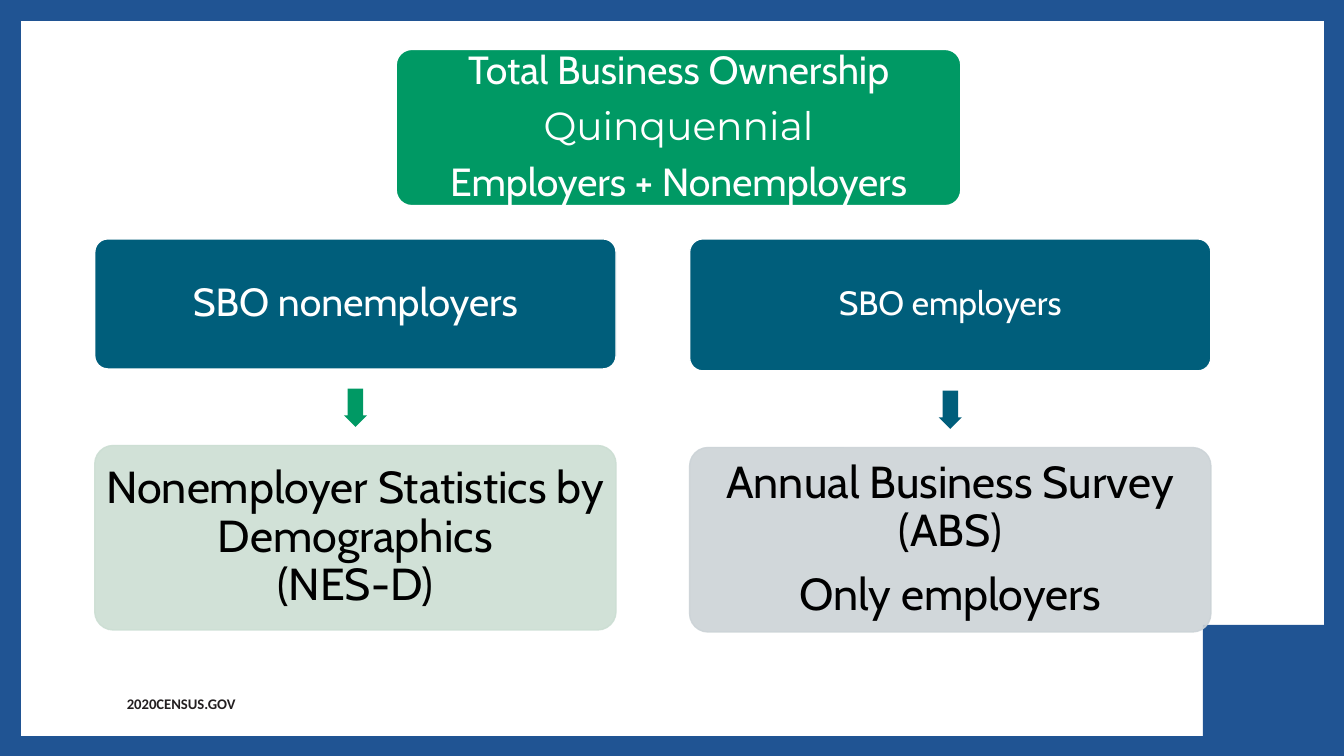
"""Build the slide on business ownership surveys."""
from dataclasses import dataclass

from lxml.etree import SubElement
from pptx import Presentation
from pptx.dml.color import RGBColor
from pptx.enum.shapes import MSO_SHAPE as Preset
from pptx.enum.text import MSO_ANCHOR as Anchor, MSO_AUTO_SIZE as AutoSize, PP_ALIGN as Align
from pptx.oxml.ns import qn
from pptx.util import Inches, Pt

COLORS = {
    "frame": "205493",
    "white": "FFFFFF",
    "footer": "231F20",
    "black": "000000",
    "teal": "005E7B",
    "green": "009964",
    "pale_green": "CCDED3",
    "pale_gray": "CCD3D7",
}
CARD_WIDTH = 5.17
CARD_TOP = 2.37
RESULT_HEIGHT = 1.83
ARROW_LENGTH, ARROW_WIDTH = 0.38, 0.23
ARROW_GAP, RESULT_GAP = 0.27, 0.76


@dataclass
class Line:
    text: str
    font: str = "Cabin"
    space_after: float = 0.35


@dataclass
class Card:
    left: float
    top: float
    width: float
    height: float
    fill: str
    lines: list[Line]
    size: int
    text_color: str = "white"
    border: str = "white"
    alpha: int = 100


@dataclass
class Column:
    left: float
    survey: str
    survey_height: float
    survey_size: int
    arrow_color: str
    result_color: str
    result_lines: list[Line]


COLUMNS = [
    Column(0.94, "SBO nonemployers", 1.29, 28, "green", "pale_green",
           [Line("Nonemployer Statistics by Demographics", space_after=0), Line("(NES-D)")]),
    Column(6.84, "SBO employers", 1.31, 24, "teal", "pale_gray",
           [Line("Annual Business Survey (ABS)"), Line("Only employers")]),
]
TOTAL = Card(3.93, 0.49, 5.6, 1.55, "green", [
    Line("Total Business Ownership"),
    Line("Quinquennial", "Montserrat"),
    Line("Employers + Nonemployers"),
], 28)


def color(name: str) -> RGBColor:
    return RGBColor.from_string(COLORS[name])


def add_block(slide, preset, left: float, top: float, width: float, height: float, fill: str):
    shape = slide.shapes.add_shape(preset, Inches(left), Inches(top), Inches(width), Inches(height))
    shape.shadow.inherit = False
    shape.fill.solid()
    shape.fill.fore_color.rgb = color(fill)
    shape.line.fill.background()
    return shape


def add_card(slide, card: Card) -> None:
    shape = add_block(slide, Preset.ROUNDED_RECTANGLE, card.left, card.top,
                      card.width, card.height, card.fill)
    shape.adjustments[0] = 0.1
    shape.line.color.rgb = color(card.border)
    shape.line.width = Pt(1)
    if card.alpha < 100:
        for element in shape._element.spPr.iter(qn("a:srgbClr")):
            SubElement(element, qn("a:alpha")).set("val", str(card.alpha * 1000))
    frame = shape.text_frame
    frame.word_wrap = True
    frame.vertical_anchor = Anchor.MIDDLE
    frame.margin_left = frame.margin_right = Inches(0.04)
    frame.margin_top = frame.margin_bottom = Inches(0.04)
    frame.text = "\n".join(line.text for line in card.lines)
    for paragraph, line in zip(frame.paragraphs, card.lines):
        paragraph.alignment = Align.CENTER
        paragraph.line_spacing = 0.9
        paragraph.space_after = Pt(line.space_after * card.size)
        font = paragraph.runs[0].font
        font.name = line.font
        font.size = Pt(card.size)
        font.color.rgb = color(card.text_color)


def add_column(slide, column: Column) -> None:
    bottom = CARD_TOP + column.survey_height
    add_card(slide, Card(column.left, CARD_TOP, CARD_WIDTH, column.survey_height, "teal",
                         [Line(column.survey)], column.survey_size))
    arrow_left = column.left + (CARD_WIDTH - ARROW_LENGTH) / 2
    arrow = add_block(slide, Preset.RIGHT_ARROW, arrow_left, bottom + ARROW_GAP,
                      ARROW_LENGTH, ARROW_WIDTH, column.arrow_color)
    arrow.rotation = 90
    arrow.adjustments[0] = 0.667
    add_card(slide, Card(column.left, bottom + RESULT_GAP, CARD_WIDTH, RESULT_HEIGHT,
                         column.result_color, column.result_lines, 32,
                         "black", column.result_color, 90))


def add_footer(slide) -> None:
    box = slide.shapes.add_textbox(Inches(1.16), Inches(6.84), Inches(1.31), Inches(0.28))
    frame = box.text_frame
    frame.word_wrap = False
    frame.auto_size = AutoSize.SHAPE_TO_FIT_TEXT
    frame.text = "2020CENSUS.GOV"
    font = frame.paragraphs[0].runs[0].font
    font.name = "Calibri"
    font.size = Pt(10.5)
    font.bold = True
    font.color.rgb = color("footer")


def main() -> None:
    presentation = Presentation()
    presentation.slide_width = Inches(13.33)
    presentation.slide_height = Inches(7.5)
    slide = presentation.slides.add_slide(presentation.slide_layouts[6])
    slide.background.fill.solid()
    slide.background.fill.fore_color.rgb = color("frame")
    add_block(slide, Preset.RECTANGLE, 0.21, 0.21, 12.92, 7.09, "white")
    add_footer(slide)
    add_block(slide, Preset.RECTANGLE, 11.93, 6.2, 1.4, 1.3, "frame")
    for column in COLUMNS:
        add_column(slide, column)
    add_card(slide, TOTAL)
    presentation.save("out.pptx")


if __name__ == "__main__":
    main()
